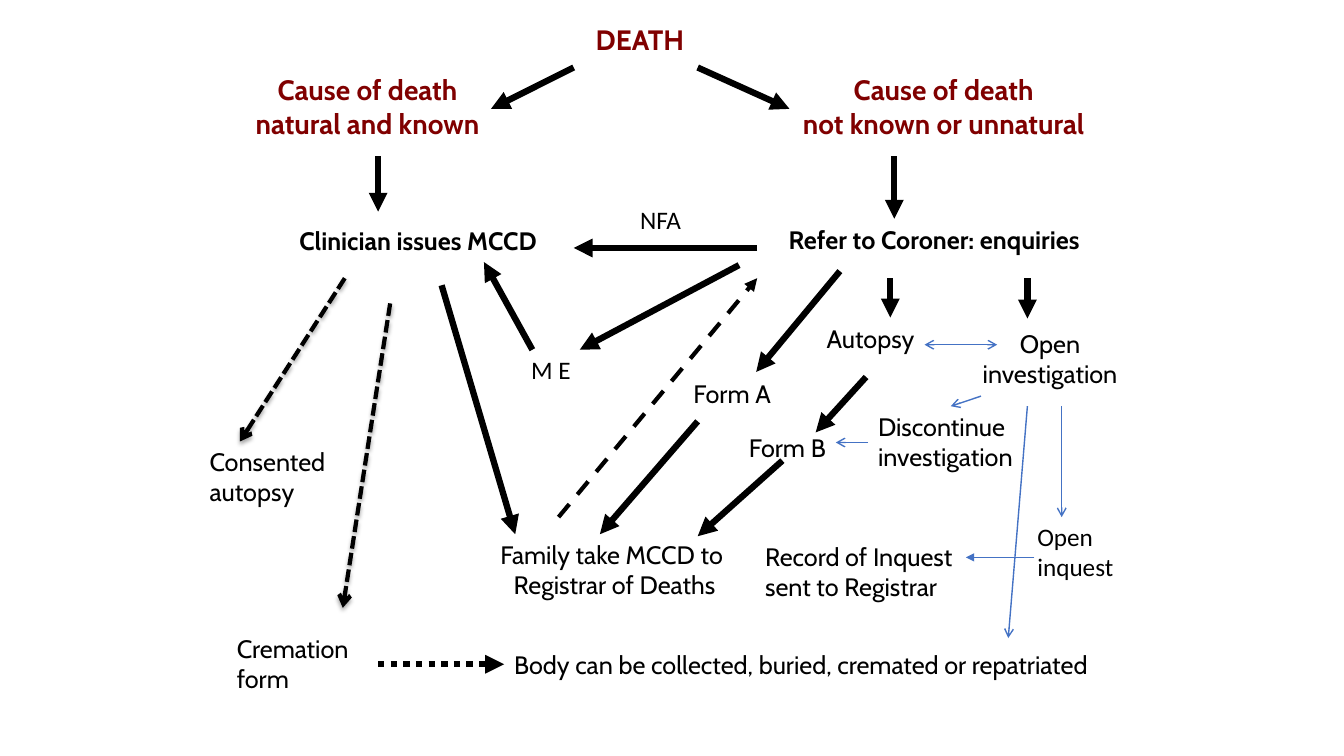
"""Flow chart of the steps that follow a death, from cause to burial."""
from lxml import etree
from pptx import Presentation
from pptx.dml.color import RGBColor
from pptx.enum.dml import MSO_LINE
from pptx.enum.shapes import MSO_CONNECTOR
from pptx.enum.text import MSO_AUTO_SIZE, PP_ALIGN
from pptx.oxml.ns import qn
from pptx.util import Pt

PX = 9144
BLACK = RGBColor(0x00, 0x00, 0x00)
MAROON = RGBColor(0x80, 0x00, 0x00)
BLUE = RGBColor(0x44, 0x72, 0xC4)
LEFT, CENTER = PP_ALIGN.LEFT, PP_ALIGN.CENTER
STRAIGHT = MSO_CONNECTOR.STRAIGHT
DASH, DOTS, SHORT_DASH = MSO_LINE.DASH, MSO_LINE.ROUND_DOT, MSO_LINE.SQUARE_DOT
FIT_TEXT = MSO_AUTO_SIZE.SHAPE_TO_FIT_TEXT

HEADING = {"size": Pt(20), "name": "Cabin", "bold": True, "color": MAROON}
STEP = {"size": Pt(18), "name": "Cabin", "bold": False, "color": BLACK}
KEY_STEP = {**STEP, "bold": True}
NOTE = {**STEP, "name": "Calibri"}

THICK = {"color": BLACK, "width": 4.5, "tail": "triangle"}
DOTTED = {**THICK, "dash": DOTS}
RETURN = {**THICK, "width": 3, "dash": DASH}
OPTION = {**RETURN, "dash": SHORT_DASH, "tail": "arrow", "shadow": True}
THIN = {"color": BLUE, "width": 1, "tail": "arrow"}
THIN_SOLID = {**THIN, "tail": "triangle"}
TWO_WAY = {**THIN, "head": "arrow"}

LABELS = [
    ("DEATH", 581, 17, 122, 44, HEADING, LEFT, True),
    ("Cause of death\nnatural and known", 206, 67, 317, 77, HEADING, CENTER, True),
    ("Cause of death\nnot known or unnatural", 783, 67, 306, 77, HEADING, CENTER, False),
    ("Clinician issues MCCD ", 266, 219, 303, 40, KEY_STEP, CENTER, True),
    ("Refer to Coroner: enquiries", 759, 218, 335, 40, KEY_STEP, CENTER, True),
    ("NFA", 625, 198, 67, 40, NOTE, LEFT, True),
    ("M E", 517, 347, 76, 40, NOTE, LEFT, True),
    ("Autopsy", 810, 316, 118, 40, STEP, LEFT, True),
    ("Open investigation", 958, 321, 167, 71, STEP, CENTER, True),
    ("Form A", 678, 370, 104, 40, STEP, LEFT, True),
    ("Form B", 733, 424, 121, 40, STEP, LEFT, True),
    ("Discontinue investigation", 861, 403, 165, 71, STEP, LEFT, True),
    ("Consented\nautopsy", 198, 438, 162, 71, STEP, LEFT, True),
    ("Family take MCCD to \nRegistrar of Deaths", 476, 530, 267, 71, STEP, CENTER, True),
    ("Record of Inquest sent to Registrar", 749, 532, 209, 71, STEP, LEFT, True),
    ("Open inquest", 1019, 512, 107, 71, NOTE, LEFT, True),
    ("Cremation\nform", 225, 623, 131, 71, STEP, LEFT, False),
    ("Body can be collected, buried, cremated or repatriated",
     500, 639, 596, 40, STEP, LEFT, False),
]

ARROWS = [
    (THICK, [
        (569, 67, 487, 108), (692, 67, 783, 108),
        (375, 155, 375, 210), (887, 155, 887, 217),
        (751, 246, 569, 246), (733, 263, 575, 347), (528, 347, 480, 260),
        (438, 283, 511, 530), (833, 269, 750, 369), (692, 418, 595, 530),
        (883, 276, 883, 315), (859, 374, 809, 429), (776, 457, 692, 532),
        (1019, 276, 1019, 316)]),
    (DOTTED, [(375, 659, 500, 659)]),
    (RETURN, [(554, 513, 751, 276)]),
    (OPTION, [(342, 276, 238, 438), (387, 301, 340, 603)]),
    (THIN, [
        (973, 393, 943, 403), (861, 439, 829, 439),
        (1019, 403, 1000, 633), (1053, 403, 1053, 513)]),
    (THIN_SOLID, [(1026, 553, 958, 553)]),
    (TWO_WAY, [(917, 342, 989, 342)]),
]

prs = Presentation()
prs.slide_width, prs.slide_height = 1333 * PX, 750 * PX
slide = prs.slides.add_slide(prs.slide_layouts[6])


def add_label(text, left, top, width, height, style, align, wrap):
    box = slide.shapes.add_textbox(left * PX, top * PX, width * PX, height * PX)
    frame = box.text_frame
    frame.text = text
    frame.word_wrap = wrap
    frame.auto_size = FIT_TEXT
    for paragraph in frame.paragraphs:
        paragraph.alignment = align
        font = paragraph.runs[0].font
        for key, value in style.items():
            if key == "color":
                font.color.rgb = value
            else:
                setattr(font, key, value)


def add_arrow(style, ends):
    arrow = slide.shapes.add_connector(STRAIGHT, *[end * PX for end in ends])
    arrow.line.color.rgb = style["color"]
    arrow.line.width = Pt(style["width"])
    if "dash" in style:
        arrow.line.dash_style = style["dash"]
    outline = arrow.line._get_or_add_ln()
    for end in ("head", "tail"):
        if end in style:
            etree.SubElement(outline, qn(f"a:{end}End"), type=style[end])
    effects = etree.SubElement(arrow._element.spPr, qn("a:effectLst"))
    if "shadow" in style:
        shadow = etree.SubElement(effects, qn("a:outerShdw"), blurRad="40000",
                                  dist="23000", dir="5400000", rotWithShape="0")
        tint = etree.SubElement(shadow, qn("a:srgbClr"), val=str(BLACK))
        etree.SubElement(tint, qn("a:alpha"), val="35000")


for label in LABELS:
    add_label(*label)

for style, routes in ARROWS:
    for route in routes:
        add_arrow(style, route)

prs.save("out.pptx")
